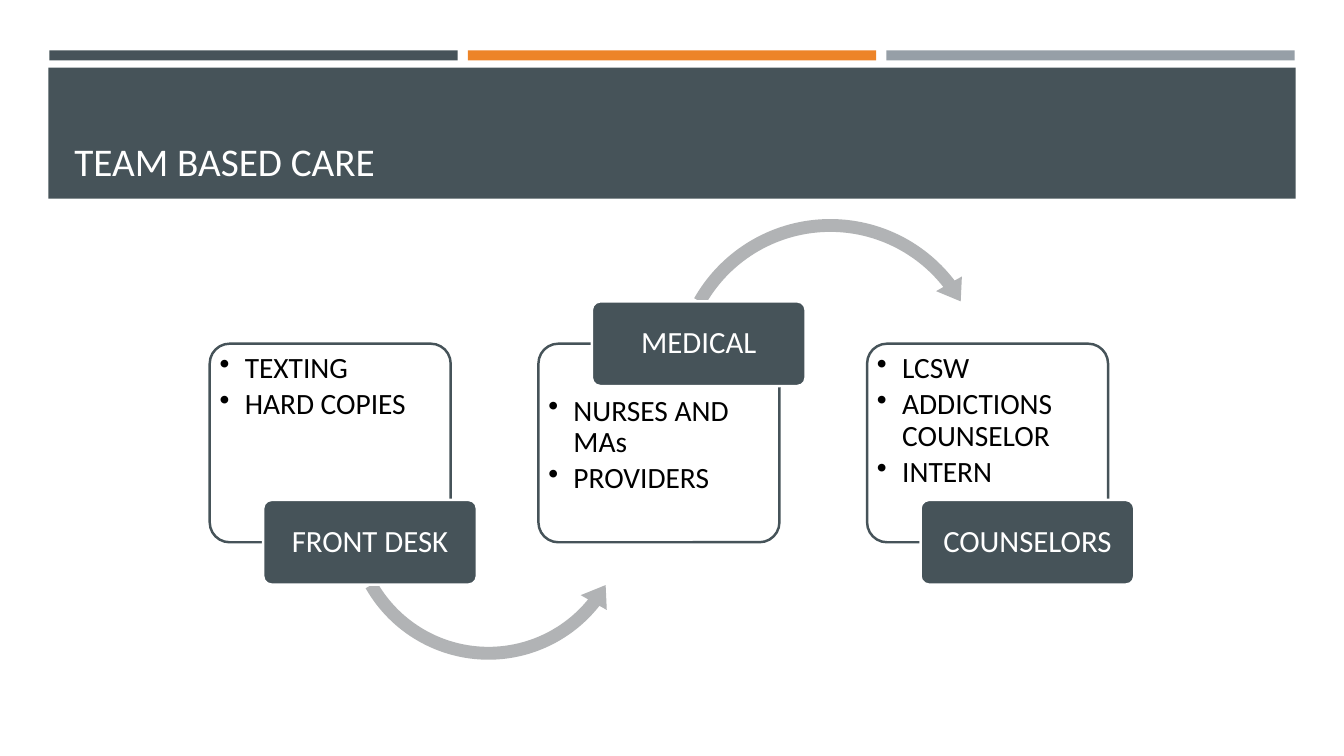
from dataclasses import dataclass

from pptx import Presentation
from pptx.dml.color import RGBColor
from pptx.enum.shapes import MSO_SHAPE
from pptx.enum.text import MSO_ANCHOR, PP_ALIGN
from pptx.oxml.ns import qn
from pptx.util import Inches, Pt
from lxml.etree import SubElement

# Content
TITLE = "TEAM BASED CARE"
STAGES = [  # label, bullets, whether the label sits on the top edge
    ("FRONT DESK", ["TEXTING", "HARD COPIES"], False),
    ("MEDICAL", ["NURSES AND MAs", "PROVIDERS"], True),
    ("COUNSELORS", ["LCSW", "ADDICTIONS COUNSELOR", "INTERN"], False),
]
ARROWS = [  # preset, offset from its card, size, adjustments
    (MSO_SHAPE.LEFT_CIRCULAR_ARROW, (1.28, 0.25), 2.97,
     (0.043, 5.394, 23.149, 90.245, 0.05)),
    (MSO_SHAPE.CIRCULAR_ARROW, (1.26, -1.32), 3.27,
     (0.039, 4.843, 193.401, 125.755, 0.045)),
]


@dataclass(frozen=True)
class Theme:
    slate: str = "465359"
    orange: str = "ED8428"
    grey: str = "969FA7"
    arrow: str = "B1B3B5"
    white: str = "FFFFFF"
    black: str = "000000"
    font: str = "Calibri"
    title: int = 28
    label: int = 22
    bullet: int = 21
    outline: float = 1.75


T = Theme()

# Layout in inches
BAR_X, BAR_Y, BAR_W, BAR_H, BAR_PITCH = 0.49, 0.5, 4.05, 0.1, 4.15
CARD_X, CARD_Y, CARD_W, CARD_H, CARD_PITCH = 2.08, 3.41, 2.39, 1.97, 3.26
LABEL_DX, LABEL_W, LABEL_H = 0.53, 2.12, 0.84
INDENT = 0.25

prs = Presentation()
prs.slide_width, prs.slide_height = Inches(13.33), Inches(7.5)
s = prs.slides.add_slide(prs.slide_layouts[6])


def add_box(preset, box, fill, line=None, adj=()):
    sp = s.shapes.add_shape(preset, *map(Inches, box))
    sp.shadow.inherit = False
    sp.fill.solid()
    sp.fill.fore_color.rgb = RGBColor.from_string(fill)
    if line:
        sp.line.color.rgb = RGBColor.from_string(line)
        sp.line.width = Pt(T.outline)
    else:
        sp.line.fill.background()
    for i, value in enumerate(adj):
        sp.adjustments[i] = value
    return sp


def write(sp, lines, size, color, anchor, align, insets, spacing=None, after=0):
    tf = sp.text_frame
    frame = {"word_wrap": True, "vertical_anchor": anchor}
    sides = ("left", "top", "right", "bottom")
    frame.update({f"margin_{k}": Inches(v) for k, v in zip(sides, insets)})
    for key, value in frame.items():
        setattr(tf, key, value)
    for i, line in enumerate(lines):
        p = tf.paragraphs[0] if i == 0 else tf.add_paragraph()
        for key, value in {"alignment": align, "line_spacing": spacing,
                           "space_after": Pt(after)}.items():
            setattr(p, key, value)
        r = p.add_run()
        r.text = line
        for key, value in {"name": T.font, "size": Pt(size)}.items():
            setattr(r.font, key, value)
        r.font.color.rgb = RGBColor.from_string(color)
    return tf


def add_bullets(tf):
    for p in tf.paragraphs:
        pPr = p._p.get_or_add_pPr()
        pPr.set("marL", str(Inches(INDENT)))
        pPr.set("indent", str(-Inches(INDENT)))
        SubElement(pPr, qn("a:buChar")).set("char", "•")


# Header bars and title band
for i, color in enumerate((T.slate, T.orange, T.grey)):
    add_box(MSO_SHAPE.RECTANGLE,
            (BAR_X + i * BAR_PITCH, BAR_Y, BAR_W, BAR_H), color)
add_box(MSO_SHAPE.RECTANGLE, (0.48, 0.67, 12.37, 1.3), T.slate)
title = s.shapes.add_textbox(*map(Inches, (0.64, 0.77, 12.06, 1.11)))
write(title, [TITLE], T.title, T.white, MSO_ANCHOR.BOTTOM, PP_ALIGN.LEFT,
      (0.1, 0.05, 0.1, 0.05))

# Stages: card, arrow to the next stage, label across a card edge
for i, (label, bullets, on_top) in enumerate(STAGES):
    x = CARD_X + i * CARD_PITCH
    card = add_box(MSO_SHAPE.ROUNDED_RECTANGLE, (x, CARD_Y, CARD_W, CARD_H),
                   T.white, T.slate, (0.1,))
    top_inset = 0.04 + (LABEL_H / 2 if on_top else 0)
    add_bullets(write(card, bullets, T.bullet, T.black, MSO_ANCHOR.TOP,
                      PP_ALIGN.LEFT, (0.04, top_inset, 0.04, 0.04), 0.9, 3))
    if i < len(ARROWS):
        preset, (dx, dy), size, adj = ARROWS[i]
        add_box(preset, (x + dx, CARD_Y + dy, size, size), T.arrow, adj=adj)
    edge = CARD_Y if on_top else CARD_Y + CARD_H
    tag = add_box(MSO_SHAPE.ROUNDED_RECTANGLE,
                  (x + LABEL_DX, edge - LABEL_H / 2, LABEL_W, LABEL_H),
                  T.slate, T.white, (0.1,))
    write(tag, [label], T.label, T.white, MSO_ANCHOR.MIDDLE, PP_ALIGN.CENTER,
          (0.05, 0.03, 0.05, 0.03), 0.9)

prs.save("out.pptx")
